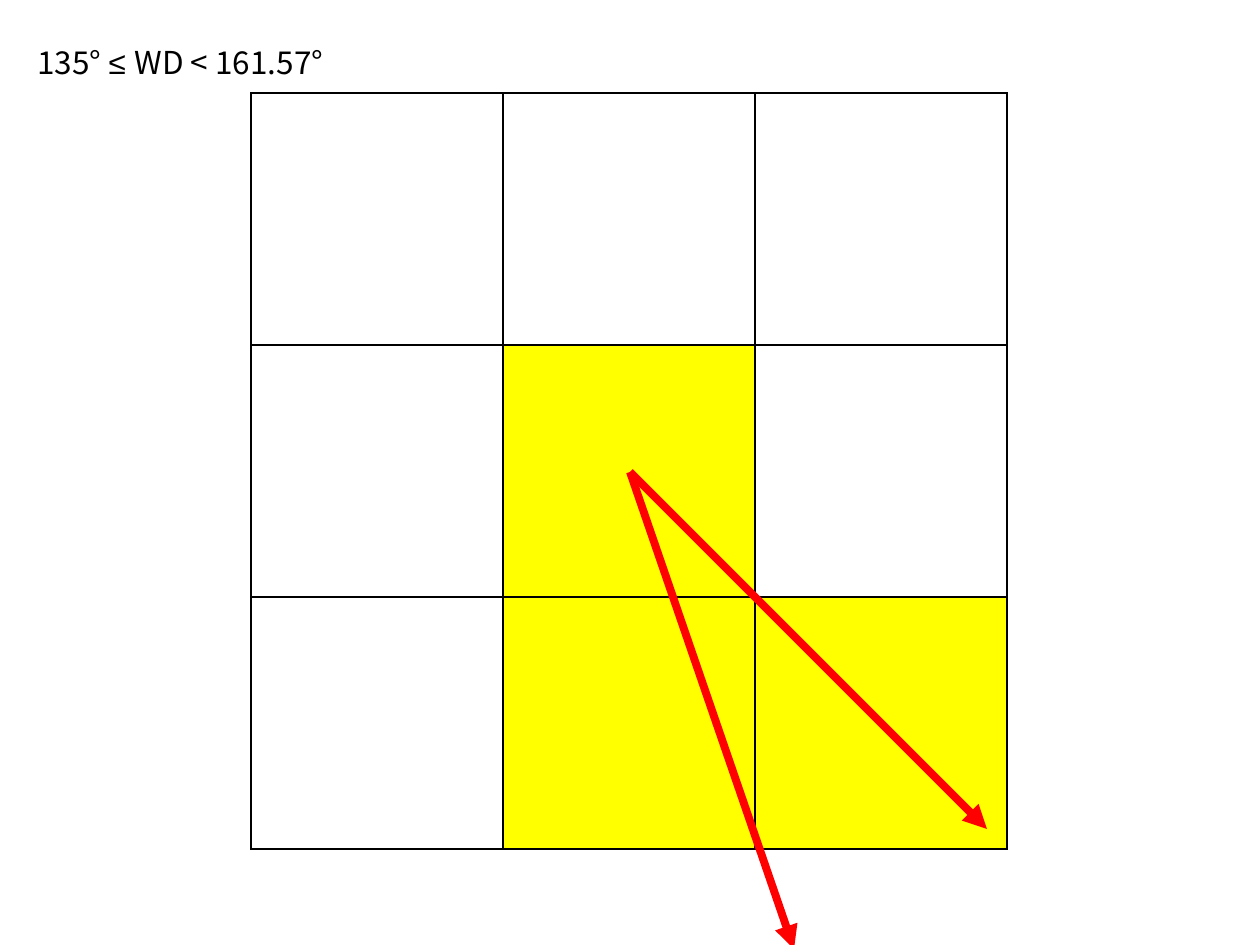
"""Build the wind direction grid slide for the 135° to 161.57° sector."""
from lxml import etree
from pptx import Presentation
from pptx.dml.color import RGBColor
from pptx.enum.shapes import MSO_CONNECTOR
from pptx.oxml import parse_xml
from pptx.oxml.ns import qn
from pptx.util import Pt

STRAIGHT = MSO_CONNECTOR.STRAIGHT
PX = 914400 / 126
COLORS = {"black": "000000", "yellow": "FFFF00", "white": "FFFFFF", "red": "FF0000"}
NS = "http://schemas.openxmlformats.org/drawingml/2006/main"
BORDER = (
    '<a:{side} xmlns:a="{ns}" w="12700"><a:solidFill><a:srgbClr val="{color}"/>'
    '</a:solidFill></a:{side}>'
)


def px(*lengths):
    return [round(length * PX) for length in lengths]


def add_run(paragraph, text, *, font, size=18, color="black"):
    run = paragraph.add_run()
    run.text = text
    run.font.name = font
    run.font.size = Pt(size)
    run.font.color.rgb = RGBColor.from_string(COLORS[color])


prs = Presentation()
prs.slide_width, prs.slide_height = px(1260, 945)
slide = prs.slides.add_slide(prs.slide_layouts[6])

SIZE = 3
CELL = 252
cell_fills = {(1, 1): "yellow", (1, 2): "white", (2, 1): "yellow", (2, 2): "yellow"}
grid = slide.shapes.add_table(SIZE, SIZE, *px(251, 93, SIZE * CELL, SIZE * CELL)).table
grid.first_row = False
grid.horz_banding = False
for index in range(SIZE):
    grid.columns[index].width = grid.rows[index].height = px(CELL)[0]
    for column in range(SIZE):
        cell = grid.cell(index, column)
        if (index, column) in cell_fills:
            cell.fill.solid()
            cell.fill.fore_color.rgb = RGBColor.from_string(COLORS[cell_fills[index, column]])
        else:
            cell.fill.background()
        properties = cell._tc.get_or_add_tcPr()
        for position, side in enumerate(("lnL", "lnR", "lnT", "lnB")):
            border = BORDER.format(side=side, ns=NS, color=COLORS["black"])
            properties.insert(position, parse_xml(border))

sector_label = slide.shapes.add_textbox(*px(25, 37, 333, 50))
sector_label.text_frame.word_wrap = False
sector_text = sector_label.text_frame.paragraphs[0]
for text, font in (
    ("135° ", "Noto Sans CJK KR"),
    ("≤ ", "Arial"),
    ("WD < 161.57°", "Noto Sans CJK KR"),
):
    add_run(sector_text, text, font=font)

for tip in ((987, 829), (794, 949)):
    wind = slide.shapes.add_connector(STRAIGHT, *px(630, 472, *tip))
    wind.line.color.rgb = RGBColor.from_string(COLORS["red"])
    wind.line.width = Pt(4.5)
    etree.SubElement(wind.line._get_or_add_ln(), qn("a:tailEnd"), type="triangle")
    etree.SubElement(wind._element.spPr, qn("a:effectLst"))

prs.save("out.pptx")
